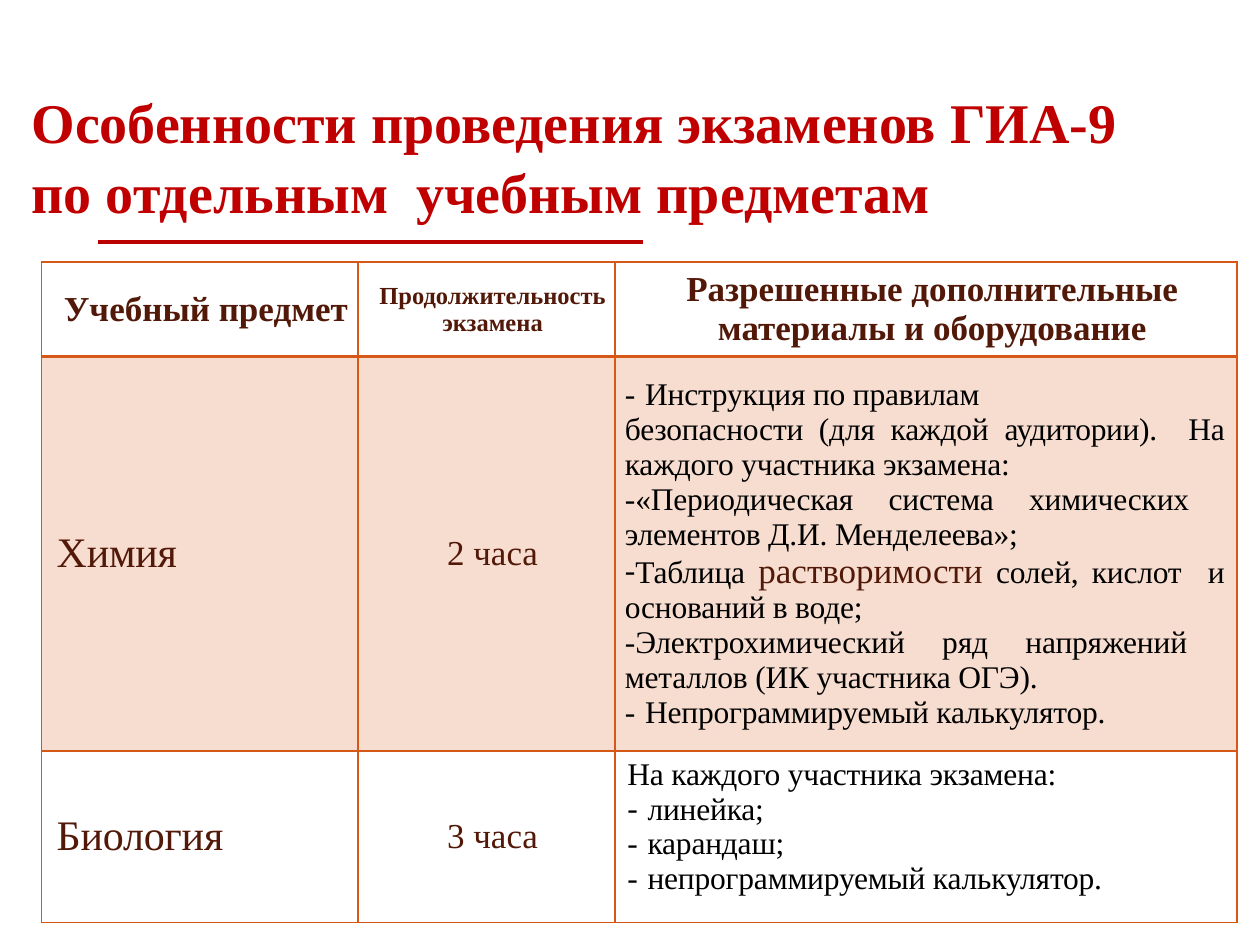
from lxml import etree
from pptx import Presentation
from pptx.dml.color import RGBColor
from pptx.enum import shapes, text
from pptx.oxml.ns import qn
from pptx.util import Inches, Pt

FONT = "Times New Roman"
RED, RULE, EDGE, BROWN, BLACK = "C00000", "BB0100", "D55816", "521808", "000000"
LEFT, MID, FULL = text.PP_ALIGN.LEFT, text.PP_ALIGN.CENTER, text.PP_ALIGN.JUSTIFY

HEADS = [(["Учебный предмет"], 20),
         (["Продолжительность", "экзамена"], 14),
         (["Разрешенные дополнительные материалы и оборудование"], 20)]

# Each item: text or runs, left margin, first-line indent, dash
CHEM = [
    ("Инструкция по правилам", 0.24, -0.16, True),
    ([("безопасности (для каждой ", {}), ("аудитории).  ", {"spc": -0.2}),
      ("На каждого участника экзамена:", {})], 0.08, 0, False),
    ("«Периодическая система химических  элементов Д.И. Менделеева»;", 0.08, 0, True),
    ([("Таблица ", {}), ("растворимости", {"size": 20, "color": BROWN, "spc": 0}),
      (" солей, кислот  и оснований в воде;", {})], 0.08, 0, True),
    ("Электрохимический ряд напряжений  металлов (ИК участника ОГЭ).", 0.08, 0, True),
    ("Непрограммируемый калькулятор.", 0.24, -0.16, True),
]
BIO = [("На каждого участника экзамена:", 0.1, 0, False)] + [
    (item, 0.26, -0.16, True)
    for item in ("линейка;", "карандаш;", "непрограммируемый калькулятор.")]
ROWS = [("Химия", "2 часа", CHEM, FULL), ("Биология", "3 часа", BIO, LEFT)]


def rgb(value):
    return RGBColor.from_string(value)


def write(frame, words, size=18, color=BLACK, bold=False, align=LEFT,
          margin=0, indent=0, dash=False, before=0, spc=0, first=False):
    """Add a paragraph; words is a string or a list of (string, format) runs."""
    para = frame.paragraphs[0] if first else frame.add_paragraph()
    para.alignment = align
    para.space_before = Pt(before)
    props = para._p.get_or_add_pPr()
    props.set("marL", str(Inches(margin)))
    props.set("indent", str(Inches(indent)))
    if dash:
        etree.SubElement(props, qn("a:buFont"), typeface=FONT)
        etree.SubElement(props, qn("a:buChar"), char="-")
        tabs = etree.SubElement(props, qn("a:tabLst"))
        stop = margin if indent else 0.24
        etree.SubElement(tabs, qn("a:tab"), pos=str(Inches(stop)), algn="l")
    for part, style in [(words, {})] if isinstance(words, str) else words:
        run = para.add_run()
        run.text = part
        font = run.font
        font.name, font.bold = FONT, bold
        font.size = Pt(style.get("size", size))
        font.color.rgb = rgb(style.get("color", color))
        gap = style.get("spc", spc)
        if gap:
            font._element.set("spc", str(round(gap * 100)))
    return para


def title(slide, left, top, width, height):
    frame = slide.shapes.add_textbox(*map(Inches, (left, top, width, height))).text_frame
    frame.word_wrap = True
    frame.vertical_anchor = text.MSO_ANCHOR.MIDDLE
    frame.margin_left = frame.margin_top = frame.margin_bottom = 0
    frame.margin_right = Inches(0.1)
    para = write(frame, "Особенности проведения экзаменов ГИА-9 по отдельным  учебным предметам",
                 size=32, color=RED, bold=True, first=True)
    para.line_spacing = 1.04


def rule(slide, left, top, width):
    line = slide.shapes.add_connector(shapes.MSO_CONNECTOR.STRAIGHT, Inches(left),
                                      Inches(top), Inches(left + width), Inches(top))
    line.line.color.rgb = rgb(RULE)
    line.line.width = Pt(2.5)
    etree.SubElement(line._element.spPr, qn("a:effectLst"))


def dress(cell, tint, top, bottom, right=0):
    """Set the borders, fill and margins of a cell."""
    props = cell._tc.get_or_add_tcPr()
    for side, width in (("L", 1), ("R", 1), ("T", top), ("B", bottom)):
        line = etree.SubElement(props, qn("a:ln" + side), w=str(Pt(width)))
        fill = etree.SubElement(line, qn("a:solidFill"))
        etree.SubElement(fill, qn("a:srgbClr"), val=EDGE)
    if tint:
        cell.fill.solid()
        cell.fill.fore_color.rgb = rgb(EDGE)
        color = props.find(qn("a:solidFill")).find(qn("a:srgbClr"))
        etree.SubElement(color, qn("a:alpha"), val="20000")
    else:
        cell.fill.background()
    cell.margin_left = cell.margin_top = cell.margin_bottom = 0
    cell.margin_right = Inches(right)
    cell.vertical_anchor = text.MSO_ANCHOR.MIDDLE


def exams(slide, left, top, width, height):
    grid = slide.shapes.add_table(3, 3, *map(Inches, (left, top, width, height))).table
    grid.first_row = grid.horz_banding = False
    for col, size in zip(grid.columns, (2.51, 2.04, 4.94)):
        col.width = Inches(size)
    for row, size in zip(grid.rows, (0.75, 3.13, 1.36)):
        row.height = Inches(size)

    for col, (lines, size) in enumerate(HEADS):
        cell = grid.cell(0, col)
        dress(cell, False, 1, 2)
        for n, line in enumerate(lines):
            write(cell.text_frame, line, size=size, color=BROWN, bold=True,
                  align=MID, margin=0.1, first=n == 0)

    for row, (name, time, items, align) in enumerate(ROWS, 1):
        chem = row == 1
        cells = [grid.cell(row, col) for col in range(3)]
        for cell, right in zip(cells, (0, 0, 0.1 if chem else 0)):
            dress(cell, chem, 2 if chem else 1, 1, right)
        write(cells[0].text_frame, name, size=24, color=BROWN,
              margin=0.1, indent=0.02, spc=-0.1, first=True)
        write(cells[1].text_frame, time, size=20, color=BROWN,
              align=MID, margin=0.1, first=True)
        for n, (words, margin, indent, dash) in enumerate(items):
            para = write(cells[2].text_frame, words, align=align, margin=margin,
                         indent=indent, dash=dash, spc=-0.1, first=n == 0)
            if not chem and n == 0:
                para.line_spacing = Pt(23.4)
        if not chem:
            cells[2].vertical_anchor = text.MSO_ANCHOR.TOP


def main():
    deck = Presentation()
    deck.slide_width, deck.slide_height = Inches(10), Inches(7.5)
    slide = deck.slides.add_slide(deck.slide_layouts[6])
    rule(slide, 0.78, 1.92, 4.32)
    title(slide, 0.25, 0.67, 9.21, 1.12)
    exams(slide, 0.33, 2.08, 9.5, 5.25)
    deck.save("out.pptx")


if __name__ == "__main__":
    main()
